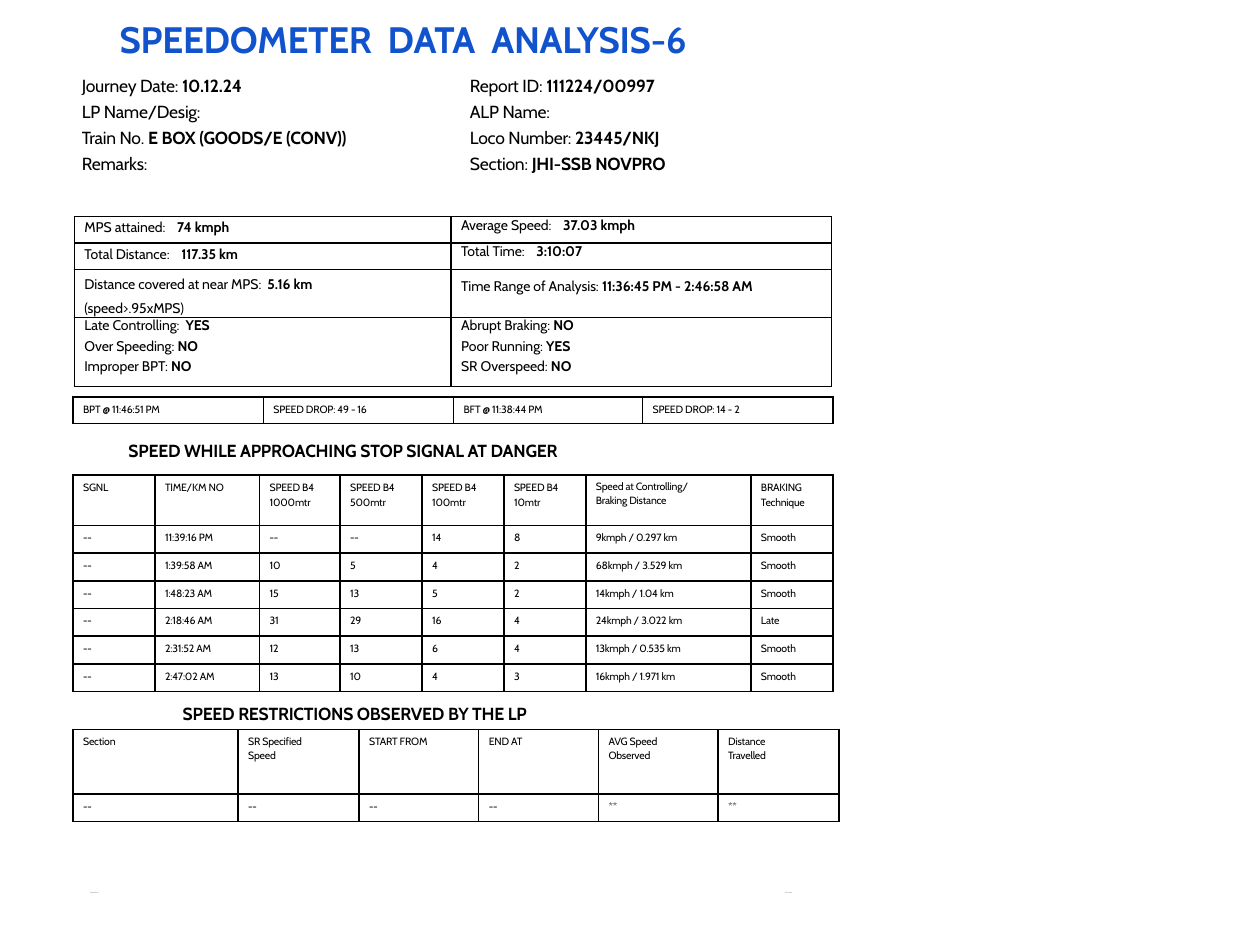
from pptx import Presentation
from pptx.dml.color import RGBColor
from pptx.enum.text import MSO_ANCHOR, PP_ALIGN
from pptx.oxml import parse_xml
from pptx.oxml.ns import nsdecls
from pptx.util import Inches, Pt

TOP, MIDDLE = MSO_ANCHOR.TOP, MSO_ANCHOR.MIDDLE
LEFT, CENTER = PP_ALIGN.LEFT, PP_ALIGN.CENTER
COLORS = {"title": "1153CC", "text": "000000", "footer": "8C8C8C"}


def write(tf, text, size, color="text", font="Cabin", align=LEFT,
          before=0, line=None, gap=0, spc=-0.1):
    """Lines become paragraphs; every second piece between bars is bold."""
    tf.word_wrap = True
    for i, row in enumerate(text.split("\n")):
        p = tf.paragraphs[0] if i == 0 else tf.add_paragraph()
        p.alignment = align
        p.space_before = Pt(before if i else 0)
        if line:
            p.line_spacing = line
        for j, piece in enumerate(row.split("|")):
            parts = [(piece, spc)]
            if gap and i == 0 and j == 0:
                parts.append((" ", gap))  # widened space after the label
            for part, spacing in parts:
                if not part:
                    continue
                r = p.add_run()
                r.text = part
                r.font.name, r.font.size = font, Pt(size)
                r.font.bold = j % 2 == 1
                r.font.color.rgb = RGBColor.from_string(COLORS[color])
                r.font._element.set("spc", str(round(spacing * 100)))


def add_grid(left, top, cols, rows):
    """Add a plain table with thin black borders."""
    tbl = slide.shapes.add_table(len(rows), len(cols), Inches(left), Inches(top),
                                 Inches(sum(cols)), Inches(sum(rows))).table
    tbl.first_row = tbl.horz_banding = False
    for col, width in zip(tbl.columns, cols):
        col.width = Inches(width)
    for row, height in zip(tbl.rows, rows):
        row.height = Inches(height)
    for cell in tbl.iter_cells():
        cell.margin_left, cell.margin_top = Inches(0.08), Inches(0.05)
        cell.margin_right = cell.margin_bottom = 0
        tc_pr = cell._tc.get_or_add_tcPr()
        for side in ("lnL", "lnR", "lnT", "lnB"):
            tc_pr.append(parse_xml(
                f'<a:{side} {nsdecls("a")} w="12700"><a:solidFill>'
                f'<a:srgbClr val="{COLORS["text"]}"/></a:solidFill></a:{side}>'))
        cell.fill.background()
    return tbl


prs = Presentation()
prs.slide_width, prs.slide_height = Inches(10), Inches(7.5)
slide = prs.slides.add_slide(prs.slide_layouts[5])

# Title
title = slide.shapes.title
title.left, title.top = Inches(0.94), Inches(0.12)
title.width, title.height = Inches(7.7), Inches(0.36)
tf = title.text_frame
tf.margin_left = tf.margin_top = Inches(0.01)
tf.margin_right = tf.margin_bottom = 0
tf.vertical_anchor = TOP
write(tf, "|SPEEDOMETER  DATA  ANALYSIS-6", 21, "title", spc=-0.15)

# Journey details, section headings and footers
details = dict(size=10, before=2.8)
footer = dict(size=1, color="footer", font="Calibri", align=CENTER, line=Pt(8.6))
boxes = [
    (0.64, 0.55, 2.64, 0.83, 0.05, TOP, details,
     "Journey Date: |10.12.24\nLP Name/Desig:\n"
     "Train No. |E BOX (GOODS/E (CONV))\nRemarks:"),
    (3.72, 0.55, 1.71, 0.83, 0.05, TOP, details,
     "Report ID: |111224/00997\nALP Name:\n"
     "Loco Number: |23445/NKJ\nSection: |JHI-SSB NOVPRO"),
    (1.01, 3.48, 4.85, 0.18, 0.01, TOP, dict(size=10),
     "|SPEED WHILE APPROACHING STOP SIGNAL AT DANGER"),
    (1.44, 5.57, 4.23, 0.18, 0.01, TOP, dict(size=10),
     "|SPEED RESTRICTIONS OBSERVED BY THE LP"),
    (0.33, 6.97, 0.83, 0.13, 0, MIDDLE, footer, "Region Railways"),
    (5.9, 6.97, 0.71, 0.13, 0, MIDDLE, footer, "SPM Analysis"),
]
for left, top, width, height, inset, anchor, style, text in boxes:
    sp = slide.shapes.add_textbox(Inches(left), Inches(top), Inches(width), Inches(height))
    tf = sp.text_frame
    tf.margin_left, tf.margin_top = Inches(0.01), Inches(inset)
    tf.margin_right = tf.margin_bottom = 0
    tf.vertical_anchor = anchor
    write(tf, text, **style)

# Run summary: text, top margin, line spacing in points, label gap
WIDE, NARROW = 4.8, 1.5
summary = [
    [("MPS attained:|74 kmph", 0.02, None, WIDE),
     ("Average Speed:|37.03 kmph", 0, None, WIDE)],
    [("Total Distance:|117.35 km", 0.02, None, WIDE),
     ("Total Time:|3:10:07", 0, None, WIDE)],
    [("Distance covered at near MPS:|5.16 km\n(speed>.95xMPS)", 0, Pt(13.6), NARROW),
     ("Time Range of Analysis: |11:36:45 PM - 2:46:58 AM", 0, Pt(14.4), 0)],
    [("Late Controlling:|YES\nOver Speeding: |NO\nImproper BPT: |NO", 0, None, NARROW),
     ("Abrupt Braking: |NO\nPoor Running: |YES\nSR Overspeed: |NO", 0, None, 0)],
]
tbl = add_grid(0.59, 1.72, [2.99, 3.02], [0.21, 0.21, 0.33, 0.55])
for r, row in enumerate(summary):
    for c, (text, inset, line, gap) in enumerate(row):
        cell = tbl.cell(r, c)
        cell.margin_top = Inches(inset)
        write(cell.text_frame, text, 8, line=line, gap=gap,
              before=0 if line else 1.9, spc=-0.05)

# Brake tests, stop signals and speed restrictions
grids = [
    (0.58, 3.15, [1.51, 1.51, 1.5, 1.51], [0.21], [
        ["BPT @ 11:46:51 PM", "SPEED DROP: 49 - 16",
         "BFT @ 11:38:44 PM", "SPEED DROP: 14 - 2"]]),
    (0.58, 3.77, [0.65, 0.83, 0.64, 0.65, 0.65, 0.65, 1.31, 0.65], [0.4] + [0.22] * 6, [
        ["SGNL", "TIME/KM NO", "SPEED B4\n1000mtr", "SPEED B4\n500mtr",
         "SPEED B4\n100mtr", "SPEED B4\n10mtr",
         "Speed at Controlling/ Braking Distance", "BRAKING\nTechnique"],
        ["--", "11:39:16 PM", "--", "--", "14", "8", "9kmph / 0.297 km", "Smooth"],
        ["--", "1:39:58 AM", "10", "5", "4", "2", "68kmph / 3.529 km", "Smooth"],
        ["--", "1:48:23 AM", "15", "13", "5", "2", "14kmph / 1.04 km", "Smooth"],
        ["--", "2:18:46 AM", "31", "29", "16", "4", "24kmph / 3.022 km", "Late"],
        ["--", "2:31:52 AM", "12", "13", "6", "4", "13kmph / 0.535 km", "Smooth"],
        ["--", "2:47:02 AM", "13", "10", "4", "3", "16kmph / 1.971 km", "Smooth"]]),
    (0.58, 5.79, [1.31, 0.96, 0.95, 0.95, 0.95, 0.96], [0.51, 0.22], [
        ["Section", "SR Specified Speed", "START FROM", "END AT",
         "AVG Speed Observed", "Distance Travelled"],
        ["--", "--", "--", "--", "**", "**"]]),
]
WRAPPED = {"Speed at Controlling/ Braking Distance", "SR Specified Speed",
           "AVG Speed Observed", "Distance Travelled"}
for left, top, cols, rows, data in grids:
    tbl = add_grid(left, top, cols, rows)
    for r, row in enumerate(data):
        for c, text in enumerate(row):
            cell = tbl.cell(r, c)
            line = None
            if text in WRAPPED:  # narrow these headers to two lines
                cell.margin_top, cell.margin_right = Inches(0.03), Inches(0.35)
                line = 1.13
            write(cell.text_frame, text, 6, before=1.6, line=line)

prs.save("out.pptx")
